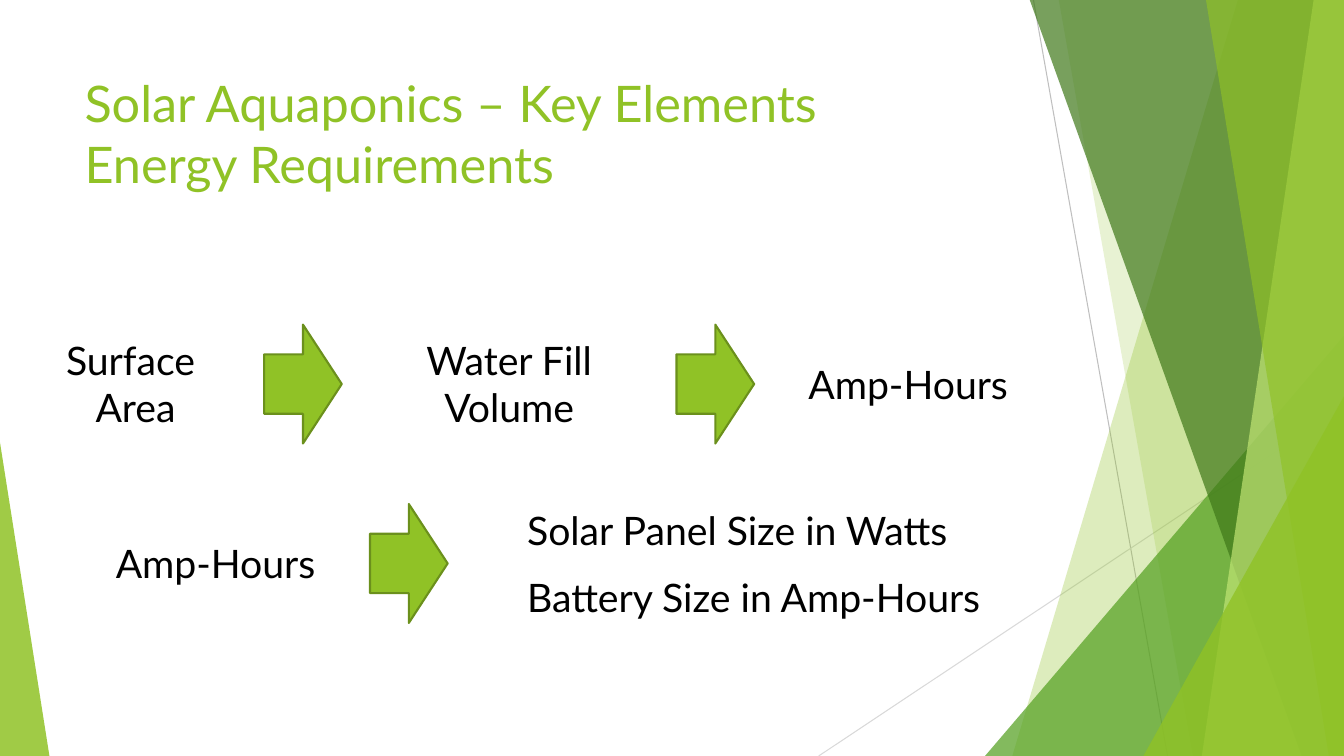
from dataclasses import dataclass

import pptx
import pptx.dml.color
import pptx.enum.shapes
import pptx.enum.text
import pptx.oxml
import pptx.oxml.ns
import pptx.util
from pptx.dml.color import RGBColor
from pptx.util import Inches

LIME = RGBColor(0x90, 0xC2, 0x26)
PALE = RGBColor(0xC0, 0xE4, 0x74)
GREEN = RGBColor(0x54, 0xA0, 0x21)
DARK = RGBColor(0x3F, 0x78, 0x19)
EDGE = RGBColor(0x6B, 0x90, 0x1C)
GRAY = RGBColor(0xBF, 0xBF, 0xBF)
LIGHT = RGBColor(0xD9, 0xD9, 0xD9)
BLACK = RGBColor(0, 0, 0)
WIDE, HIGH, TOP = 13.33, 7.5, -0.01
CENTER = pptx.enum.text.PP_ALIGN.CENTER


@dataclass
class Ray:
    start: tuple[float, float]
    end: tuple[float, float]
    color: RGBColor


@dataclass
class Facet:
    points: list[tuple[float, float]]
    color: RGBColor
    alpha: int


@dataclass
class Label:
    text: str
    left: float
    top: float
    width: float
    height: float = 0.57
    align: pptx.enum.text.PP_ALIGN | None = None


def band(top: float, foot: float) -> list[tuple[float, float]]:
    """Outline from a slanted left side to the right slide edge."""
    return [(top, TOP), (WIDE, TOP), (WIDE, HIGH), (foot, HIGH)]


def wedge(side: float, peak: float, foot: float) -> list[tuple[float, float]]:
    """Right triangle on the bottom edge, upright at one slide side."""
    return [(side, peak), (side, HIGH), (foot, HIGH)]


RAYS = [
    Ray((10.25, 0), (11.58, HIGH), GRAY),
    Ray((WIDE, 4.03), (8.12, HIGH), LIGHT),
]
FACETS = [
    Facet(band(12.28, 10.04), LIME, 30),
    Facet(band(10.5, 11.83), LIME, 20),
    Facet(wedge(WIDE, 3.33, 9.77), GREEN, 72),
    Facet(band(10.21, 12.91), DARK, 70),
    Facet(band(13.03, 11.92), PALE, 70),
    Facet(band(11.96, 13.18), LIME, 65),
    Facet(wedge(WIDE, 3.93, 11.34), LIME, 80),
    Facet(wedge(0, 4.39, 0.49), LIME, 85),
]
LABELS = [
    Label("Surface \nArea", 0.51, 3.29, 1.67, 1.04, CENTER),
    Label("Water Fill\nVolume", 3.83, 3.29, 2.44, 1.04, CENTER),
    Label("Amp-Hours", 7.92, 3.53, 2.44),
    Label("Amp-Hours", 1.05, 5.3, 2.44),
    Label("Solar Panel Size in Watts", 5.13, 4.97, 5.01),
    Label("Battery Size in Amp-Hours", 5.13, 5.64, 4.88),
]
ARROWS = [(2.62, 3.22), (6.71, 3.22), (3.67, 5)]


def draw_ray(slide, ray: Ray) -> None:
    ends = [Inches(n) for n in (*ray.start, *ray.end)]
    line = slide.shapes.add_connector(
        pptx.enum.shapes.MSO_CONNECTOR.STRAIGHT, *ends)
    line.line.color.rgb = ray.color
    line.line.width = pptx.util.Pt(0.75)
    props = line._element.spPr
    props.append(pptx.oxml.parse_xml(
        f'<a:effectLst {pptx.oxml.ns.nsdecls("a")}/>'))


def draw_facet(slide, facet: Facet) -> None:
    first, *rest = [(Inches(x), Inches(y)) for x, y in facet.points]
    pen = slide.shapes.build_freeform(*first)
    pen.add_line_segments(rest, close=True)
    shape = pen.convert_to_shape()
    shape.shadow.inherit = False
    shape.line.fill.background()
    shape.fill.solid()
    shape.fill.fore_color.rgb = facet.color
    tint = shape._element.spPr.find(".//" + pptx.oxml.ns.qn("a:srgbClr"))
    tint.append(pptx.oxml.parse_xml(
        f'<a:alpha {pptx.oxml.ns.nsdecls("a")} val="{facet.alpha * 1000}"/>'))


def draw_arrow(slide, left: float, top: float) -> None:
    arrow = slide.shapes.add_shape(
        pptx.enum.shapes.MSO_SHAPE.RIGHT_ARROW,
        Inches(left), Inches(top), Inches(0.77), Inches(1.18))
    arrow.shadow.inherit = False
    arrow.fill.solid()
    arrow.fill.fore_color.rgb = LIME
    arrow.line.color.rgb = EDGE
    arrow.line.width = pptx.util.Pt(1.5)


def write(slide, label: Label, *, size: int = 28,
          color: RGBColor = BLACK, face: str = "Lato") -> None:
    box = slide.shapes.add_textbox(
        Inches(label.left), Inches(label.top),
        Inches(label.width), Inches(label.height))
    frame = box.text_frame
    frame.word_wrap = True
    frame.text = label.text
    for line in frame.paragraphs:
        line.alignment = label.align
        for run in line.runs:
            run.font.name = face
            run.font.size = pptx.util.Pt(size)
            run.font.color.rgb = color


def main() -> None:
    deck = pptx.Presentation()
    deck.slide_width, deck.slide_height = Inches(WIDE), Inches(HIGH)
    slide = deck.slides.add_slide(deck.slide_layouts[6])
    for ray in RAYS:
        draw_ray(slide, ray)
    for facet in FACETS:
        draw_facet(slide, facet)
    title = Label("Solar Aquaponics – Key Elements\vEnergy Requirements",
                  0.74, 0.67, 9.4, 1.44)
    write(slide, title, size=36, color=LIME)
    for label in LABELS:
        write(slide, label)
    for left, top in ARROWS:
        draw_arrow(slide, left, top)
    deck.save("out.pptx")


if __name__ == "__main__":
    main()
